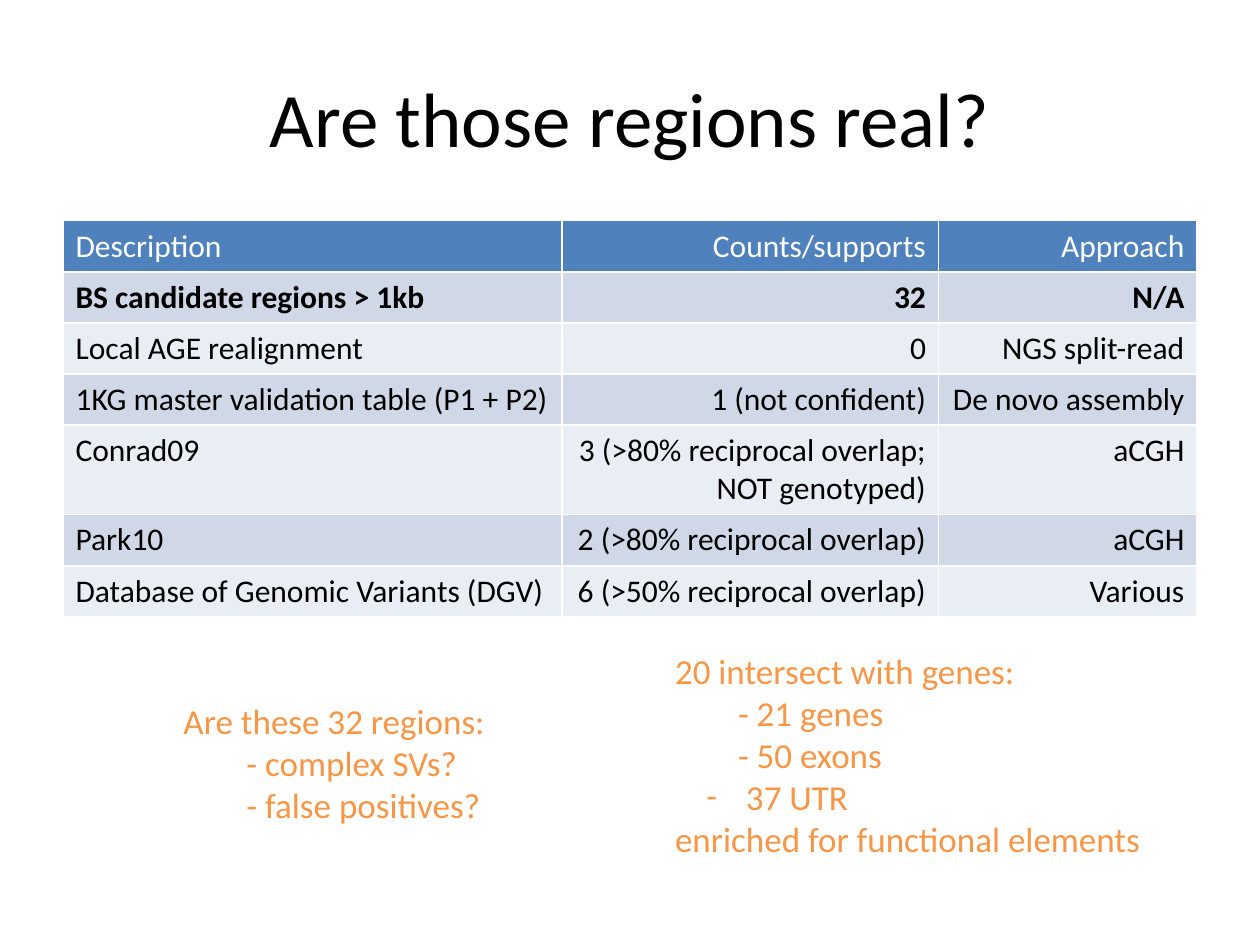
from dataclasses import dataclass

from lxml import etree
from pptx import Presentation
from pptx.dml.color import RGBColor
from pptx.enum.text import MSO_ANCHOR, MSO_AUTO_SIZE, PP_ALIGN
from pptx.oxml.ns import qn
from pptx.util import Cm, Pt

LEFT, CENTER, RIGHT = PP_ALIGN.LEFT, PP_ALIGN.CENTER, PP_ALIGN.RIGHT
MIDDLE = MSO_ANCHOR.MIDDLE
GROW = MSO_AUTO_SIZE.SHAPE_TO_FIT_TEXT

BLACK = RGBColor(0x00, 0x00, 0x00)
WHITE = RGBColor(0xFF, 0xFF, 0xFF)
BLUE = RGBColor(0x4F, 0x81, 0xBD)
BAND_DARK = RGBColor(0xD0, 0xD8, 0xE8)
BAND_LIGHT = RGBColor(0xE9, 0xED, 0xF4)
ORANGE = RGBColor(0xF7, 0x96, 0x46)

FONT = "Calibri"
COLUMN_WIDTHS = (10.06, 7.59, 5.21)
ROW_HEIGHT, TALL_ROW_HEIGHT = 1.03, 1.78
ROWS = (
    ("Description", "Counts/supports", "Approach"),
    ("BS candidate regions > 1kb", "32", "N/A"),
    ("Local AGE realignment", "0", "NGS split-read"),
    ("1KG master validation table (P1 + P2)", "1 (not confident)", "De novo assembly"),
    ("Conrad09", "3 (>80% reciprocal overlap;\nNOT genotyped)", "aCGH"),
    ("Park10", "2 (>80% reciprocal overlap)", "aCGH"),
    ("Database of Genomic Variants (DGV)", "6 (>50% reciprocal overlap)", "Various"),
)


@dataclass
class Line:
    text: str
    indent: float = 0
    bullet: str = ""


@dataclass
class Note:
    left: float
    top: float
    width: float
    height: float
    wrap: bool
    lines: tuple[Line, ...]


NOTES = (
    Note(3.45, 13.97, 6.63, 2.82, False, (
        Line("Are these 32 regions:"),
        Line("- complex SVs?", 1.27),
        Line("- false positives?", 1.27),
    )),
    Note(13.36, 12.97, 10.31, 4.52, True, (
        Line("20 intersect with genes:"),
        Line("- 21 genes", 1.27),
        Line("- 50 exons", 1.27),
        Line(" 37 UTR", 1.27, "-"),
        Line("enriched for functional elements"),
    )),
)


def format_font(font, size: float, color: RGBColor, bold: bool = False) -> None:
    values = {"name": FONT, "size": Pt(size), "bold": bold}
    for name, value in values.items():
        setattr(font, name, value)
    font.color.rgb = color


def add_title(page, text: str) -> None:
    title = page.shapes.title
    place = {"left": Cm(1.27), "top": Cm(0.76), "width": Cm(22.86), "height": Cm(3.18)}
    for name, value in place.items():
        setattr(title, name, value)
    title.text_frame.text = text
    title.text_frame.vertical_anchor = MIDDLE
    para = title.text_frame.paragraphs[0]
    para.alignment = CENTER
    format_font(para.runs[0].font, 44, BLACK)


def add_borders(cell) -> None:
    properties = cell._tc.get_or_add_tcPr()
    for side in "LRTB":
        line = etree.SubElement(properties, qn(f"a:ln{side}"), w=str(Pt(1)))
        fill = etree.SubElement(line, qn("a:solidFill"))
        etree.SubElement(fill, qn("a:srgbClr"), val=str(WHITE))


def add_region_table(page) -> None:
    frame = page.shapes.add_table(
        len(ROWS), len(COLUMN_WIDTHS), Cm(1.27), Cm(4.45),
        Cm(sum(COLUMN_WIDTHS)), Cm(ROW_HEIGHT * len(ROWS)))
    table = frame.table
    for column, width in zip(table.columns, COLUMN_WIDTHS):
        column.width = Cm(width)
    for row_index, texts in enumerate(ROWS):
        header = row_index == 0
        tall = any("\n" in text for text in texts)
        table.rows[row_index].height = Cm(TALL_ROW_HEIGHT if tall else ROW_HEIGHT)
        band = BLUE if header else BAND_DARK if row_index % 2 else BAND_LIGHT
        for column_index, text in enumerate(texts):
            cell = table.cell(row_index, column_index)
            add_borders(cell)
            cell.fill.solid()
            cell.fill.fore_color.rgb = band
            cell.text_frame.text = text
            for para in cell.text_frame.paragraphs:
                para.alignment = RIGHT if column_index else LEFT
                format_font(para.runs[0].font, 18, WHITE if header else BLACK,
                            bold=row_index == 1)


def add_note(page, note: Note) -> None:
    box = page.shapes.add_textbox(
        Cm(note.left), Cm(note.top), Cm(note.width), Cm(note.height))
    text_frame = box.text_frame
    text_frame.word_wrap = note.wrap
    text_frame.auto_size = GROW
    for index, line in enumerate(note.lines):
        para = text_frame.add_paragraph() if index else text_frame.paragraphs[0]
        properties = para._p.get_or_add_pPr()
        if line.indent:
            properties.set("marL", str(Cm(line.indent)))
        if line.bullet:
            properties.set("indent", str(-Cm(0.64)))
            etree.SubElement(properties, qn("a:buFont"), typeface=FONT)
            etree.SubElement(properties, qn("a:buChar"), char=line.bullet)
        span = para.add_run()
        span.text = line.text
        format_font(span.font, 20, ORANGE)


def main() -> None:
    deck = Presentation()
    deck.slide_width, deck.slide_height = Cm(25.4), Cm(19.05)
    page = deck.slides.add_slide(deck.slide_layouts[5])

    # Title and validation table
    add_title(page, "Are those regions real?")
    add_region_table(page)

    # Questions and findings below the table
    for note in NOTES:
        add_note(page, note)

    deck.save("out.pptx")


if __name__ == "__main__":
    main()
